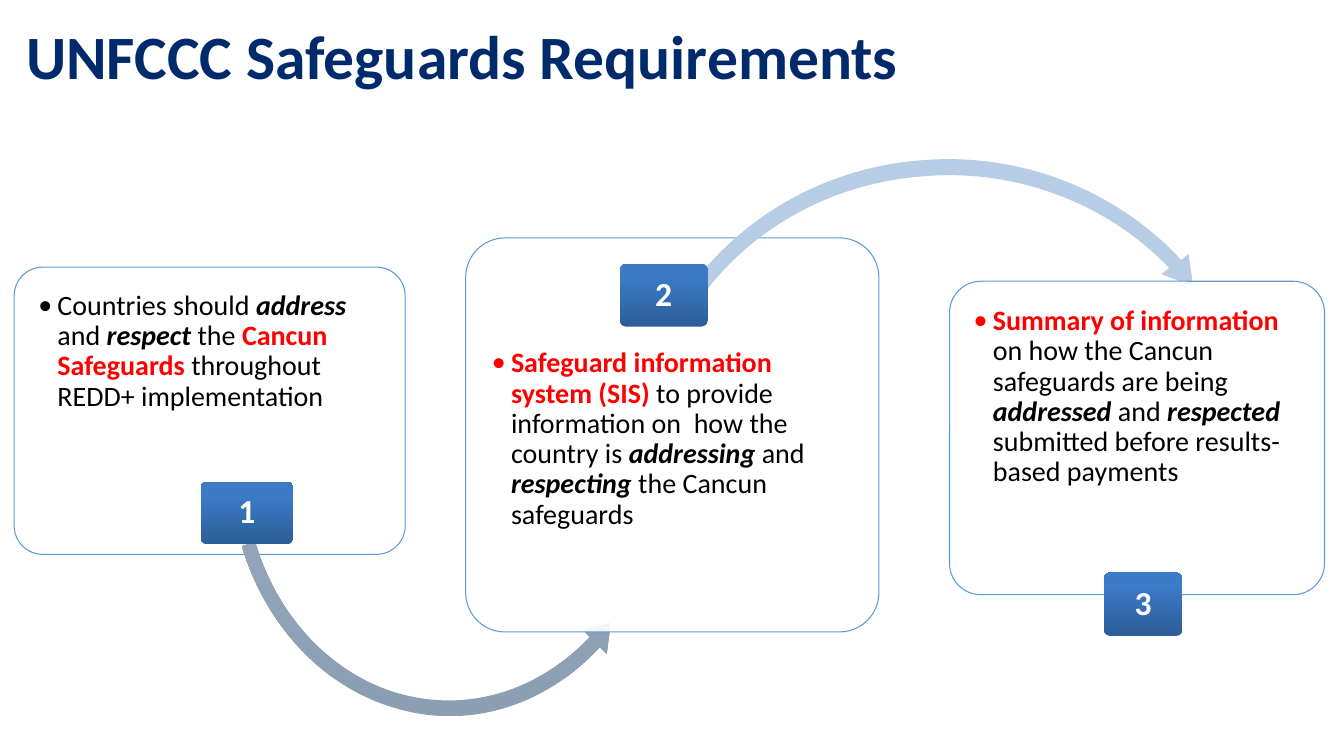
"""Build the slide on UNFCCC safeguards requirements."""
from typing import NamedTuple

from lxml import etree
from pptx import Presentation
from pptx.dml.color import RGBColor
from pptx.enum.shapes import MSO_SHAPE
from pptx.enum.text import MSO_ANCHOR, PP_ALIGN
from pptx.oxml.ns import qn
from pptx.util import Inches, Pt

ROUND = MSO_SHAPE.ROUNDED_RECTANGLE
TOP, MIDDLE = MSO_ANCHOR.TOP, MSO_ANCHOR.MIDDLE
LEFT, CENTER = PP_ALIGN.LEFT, PP_ALIGN.CENTER

HUES = {
    "navy": "002A6C", "black": "000000", "red": "FF0000", "white": "FFFFFF",
    "edge": "5B9BD5", "deep": "2D5D97", "blue": "3B7BC8",
    "slate": "8C9EB1", "steel": "9EB2C7", "pale": "B7CDE5",
}
Box = tuple[float, float, float, float]


class Run(NamedTuple):
    text: str
    hue: str = "black"
    bold: bool = False
    slant: bool = False


class Arrow(NamedTuple):
    frame: Box
    steps: list[tuple[float, ...]]
    low: str
    high: str


class Card(NamedTuple):
    frame: Box
    body: Box
    runs: list[Run]
    badge: Box
    arrow: Arrow | None = None


def key(text: str) -> Run:
    return Run(text, "red", True)


def strong(text: str) -> Run:
    return Run(text, bold=True, slant=True)


CARDS = [
    Card((0.14, 2.65, 3.88, 2.85), (0.2, 2.71, 3.76, 2.11),
         [Run("Countries should "), strong("address"), Run(" and "),
          strong("respect "), Run("the "), key("Cancun Safeguards "),
          Run("throughout REDD+ implementation")],
         (1.99, 4.78, 0.92, 0.62),
         Arrow((2.19, 2.02, 4.53, 5.19),
               [(2.4, 5.42), (2.53, 5.37),
                (2.75, 6.12, 3.29, 6.69, 3.96, 6.88),
                (4.63, 7.07, 5.34, 6.86, 5.85, 6.32), (5.78, 6.25),
                (6.06, 6.18), (6.02, 6.49), (5.95, 6.42),
                (5.42, 7, 4.66, 7.24, 3.94, 7.03),
                (3.22, 6.83, 2.64, 6.22, 2.4, 5.42)], "slate", "steel")),
    Card((4.62, 2.36, 4.1, 3.91), (4.7, 3.28, 3.94, 2.89),
         [key("Safeguard information system (SIS)"),
          Run(" to provide information on  how the country is "),
          strong("addressing "), Run("and "), strong("respecting "),
          Run("the Cancun safeguards")],
         (6.15, 2.62, 0.87, 0.62),
         Arrow((6.21, 1.47, 6.38, 6.13),
               [(6.78, 2.95), (7.3, 2.17, 8.18, 1.66, 9.15, 1.59),
                (10.12, 1.51, 11.07, 1.88, 11.72, 2.58), (11.79, 2.52),
                (11.84, 2.84), (11.52, 2.72), (11.6, 2.66),
                (10.98, 2.01, 10.07, 1.67, 9.15, 1.75),
                (8.23, 1.82, 7.4, 2.29, 6.9, 3.03)], "pale", "pale")),
    Card((9.42, 2.79, 3.72, 3.11), (9.48, 2.86, 3.59, 2.3),
         [key("Summary of information "),
          Run("on how the Cancun safeguards are being "),
          strong("addressed "), Run("and "), strong("respected "),
          Run("submitted before results-based payments")],
         (10.95, 5.68, 0.78, 0.63)),
]


def color(name: str) -> RGBColor:
    return RGBColor.from_string(HUES[name])


def place(box: Box) -> list[int]:
    return [Inches(v) for v in box]


def write(shape, runs: list[Run], *, size: float, anchor=MIDDLE, align=LEFT,
          pad: tuple[float, float] = (0.1, 0.05), after: float = 0,
          bullet: bool = False) -> None:
    frame = shape.text_frame
    frame.word_wrap = True
    frame.vertical_anchor = anchor
    frame.margin_left = frame.margin_right = Inches(pad[0])
    frame.margin_top = frame.margin_bottom = Inches(pad[1])
    para = frame.paragraphs[0]
    para.alignment, para.line_spacing = align, 0.9
    para.space_after = Pt(after)
    if bullet:
        props = para._p.get_or_add_pPr()
        props.set("marL", str(Inches(0.19)))
        props.set("indent", str(-Inches(0.19)))
        tint = etree.SubElement(props, qn("a:buClr"))
        etree.SubElement(tint, qn("a:srgbClr"), val=HUES[runs[0].hue])
        etree.SubElement(props, qn("a:buFont"), typeface="Calibri")
        etree.SubElement(props, qn("a:buChar"), char="•")
    para.font.size = Pt(size)
    for item in runs:
        run = para.add_run()
        run.text = item.text
        font = run.font
        font.name, font.size = "Calibri", Pt(size)
        font.bold, font.italic = item.bold, item.slant
        font.color.rgb = color(item.hue)


def blend(shape, low: str, high: str, end: float = 1) -> None:
    shape.shadow.inherit = False
    shape.line.fill.background()
    shape.fill.gradient()
    shape.fill.gradient_angle = 90
    for stop, name, spot in zip(shape.fill.gradient_stops, (low, high), (0, end)):
        stop.color.rgb = color(name)
        stop.position = spot


def panel(shapes, box: Box):
    shape = shapes.add_shape(ROUND, *place(box))
    shape.adjustments[0] = 0.1
    shape.shadow.inherit = False
    return shape


def sweep(shapes, arrow: Arrow) -> None:
    left, top, width, height = place(arrow.frame)
    pen = shapes.build_freeform(left, top)
    pen.add_line_segments([(left + width, top + height)])
    shape = pen.convert_to_shape()
    route = shape._element.spPr.find(".//" + qn("a:path"))
    for node in list(route):
        route.remove(node)
    for rank, step in enumerate(arrow.steps):
        tag = "a:cubicBezTo" if len(step) == 6 else "a:lnTo" if rank else "a:moveTo"
        node = etree.SubElement(route, qn(tag))
        for x, y in zip(step[::2], step[1::2]):
            etree.SubElement(node, qn("a:pt"), x=str(Inches(x) - left),
                             y=str(Inches(y) - top))
    etree.SubElement(route, qn("a:close"))
    blend(shape, arrow.low, arrow.high)


def draw(shapes, card: Card, rank: int) -> None:
    frame = panel(shapes, card.frame)
    frame.fill.solid()
    frame.fill.fore_color.rgb = color("white")
    tint = frame.fill._xPr.find(".//" + qn("a:srgbClr"))
    etree.SubElement(tint, qn("a:alpha"), val="90000")
    frame.line.color.rgb = color("edge")
    frame.line.width = Pt(0.75)
    write(shapes.add_textbox(*place(card.body)), card.runs, size=20, anchor=TOP,
          pad=(0.18, 0.18), after=2.4, bullet=True)
    if card.arrow:
        sweep(shapes, card.arrow)
    badge = panel(shapes, card.badge)
    blend(badge, "deep", "blue", 0.8)
    write(badge, [Run(str(rank), "white", True)], size=24, align=CENTER,
          pad=(0.07, 0.04), after=8.4)


def main() -> None:
    deck = Presentation()
    deck.slide_width, deck.slide_height = Inches(40 / 3), Inches(7.5)
    shapes = deck.slides.add_slide(deck.slide_layouts[6]).shapes
    title = shapes.add_textbox(*place((0.16, 0, 12.99, 1.18)))
    write(title, [Run("UNFCCC Safeguards Requirements", "navy", True)], size=44)
    for rank, card in enumerate(CARDS, 1):
        draw(shapes, card, rank)
    deck.save("out.pptx")


if __name__ == "__main__":
    main()
